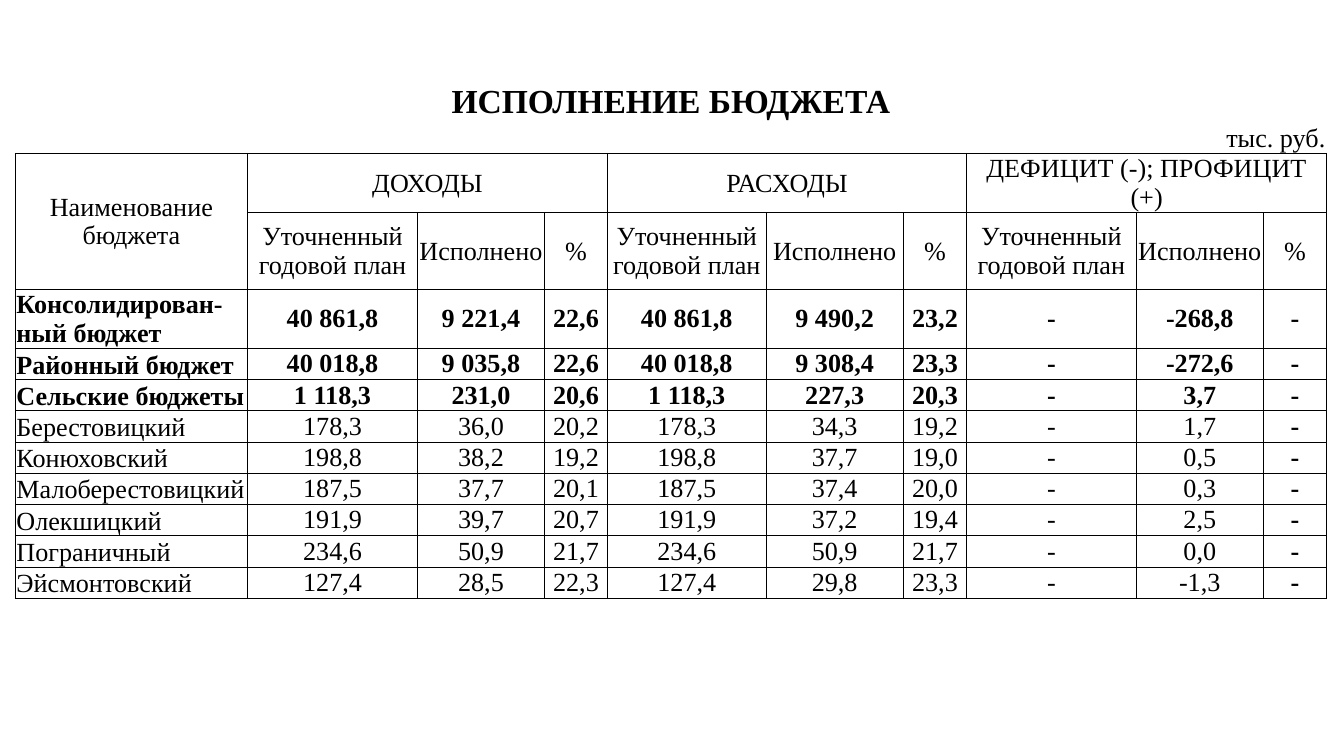
import pptx
import pptx.util
import pptx.dml.color
import pptx.enum.text
import lxml.etree
from pptx.oxml.ns import qn

Cm = pptx.util.Cm
ALIGN = pptx.enum.text.PP_ALIGN
ANCHOR = pptx.enum.text.MSO_ANCHOR
BLACK = pptx.dml.color.RGBColor(0, 0, 0)
FONT = "Times New Roman"
SIZE = 14
NO_STYLE = "{2D5ABB26-0587-4C30-8999-92F81FD0307C}"

COLS = [4.39, 2.57, 0.64, 1.66, 0.74, 1.19, 3, 0.53, 2.06, 0.23, 0.97,
        3.2, 1.32, 1.09, 1.19]
ROWS = [0.71, 0.58, 1.12, 1.45, 1.12] + [0.59] * 8

# Column spans as (first column, last column)
UNIT_SPANS = [(0, 0), (1, 1), (2, 3), (4, 5), (6, 7), (8, 9), (10, 10),
              (11, 12), (13, 14)]
GROUP_SPANS = [(1, 5), (6, 10), (11, 14)]
DATA_SPANS = [(0, 0), (1, 2), (3, 4), (5, 5), (6, 6), (7, 8), (9, 10),
              (11, 11), (12, 13), (14, 14)]

GROUPS = ["ДОХОДЫ", "РАСХОДЫ", "ДЕФИЦИТ (-); ПРОФИЦИТ (+)"]
MEASURES = ["Уточненный годовой план", "Исполнено", "%"]
BUDGETS = [
    ["Консолидирован-ный бюджет", "40 861,8", "9 221,4", "22,6", "40 861,8", "9 490,2", "23,2", "-", "-268,8", "-"],
    ["Районный бюджет", "40 018,8", "9 035,8", "22,6", "40 018,8", "9 308,4", "23,3", "-", "-272,6", "-"],
    ["Сельские бюджеты", "1 118,3", "231,0", "20,6", "1 118,3", "227,3", "20,3", "-", "3,7", "-"],
    ["Берестовицкий", "178,3", "36,0", "20,2", "178,3", "34,3", "19,2", "-", "1,7", "-"],
    ["Конюховский", "198,8", "38,2", "19,2", "198,8", "37,7", "19,0", "-", "0,5", "-"],
    ["Малоберестовицкий", "187,5", "37,7", "20,1", "187,5", "37,4", "20,0", "-", "0,3", "-"],
    ["Олекшицкий", "191,9", "39,7", "20,7", "191,9", "37,2", "19,4", "-", "2,5", "-"],
    ["Пограничный", "234,6", "50,9", "21,7", "234,6", "50,9", "21,7", "-", "0,0", "-"],
    ["Эйсмонтовский", "127,4", "28,5", "22,3", "127,4", "29,8", "23,3", "-", "-1,3", "-"],
]
BOLD_BUDGETS = 3


def write(cell, text, size=SIZE, bold=False, align=ALIGN.CENTER,
          anchor=ANCHOR.MIDDLE, bottom=0):
    cell.vertical_anchor = anchor
    cell.margin_bottom = Cm(bottom)
    tf = cell.text_frame
    for i, line in enumerate(text.split("\n")):
        p = tf.add_paragraph() if i else tf.paragraphs[0]
        p.alignment = align
        r = p.add_run()
        r.text = line
        r.font.name = FONT
        r.font.size = pptx.util.Pt(size)
        r.font.bold = bold
        r.font.color.rgb = BLACK


def add_borders(cell, sides):
    tc_pr = cell._tc.get_or_add_tcPr()
    for i, side in enumerate(sides):
        ln = lxml.etree.Element(qn("a:ln" + side), w=str(pptx.util.Pt(0.5)))
        fill = lxml.etree.SubElement(ln, qn("a:solidFill"))
        lxml.etree.SubElement(fill, qn("a:srgbClr"), val=str(BLACK))
        tc_pr.insert(i, ln)


prs = pptx.Presentation()
prs.slide_width, prs.slide_height = Cm(25.4), Cm(14.29)
s = prs.slides.add_slide(prs.slide_layouts[6])

# Table grid
frame = s.shapes.add_table(len(ROWS), len(COLS), Cm(0.29), Cm(1.55),
                           Cm(sum(COLS)), Cm(sum(ROWS)))
table = frame.table
table.first_row = table.horz_banding = False
table._tbl.tblPr.find(qn("a:tableStyleId")).text = NO_STYLE
for column, width in zip(table.columns, COLS):
    column.width = Cm(width)
for row, height in zip(table.rows, ROWS):
    row.height = Cm(height)

# Margins and borders: none on the title, a bottom line on the unit row
for i, row in enumerate(table.rows):
    for cell in row.cells:
        cell.margin_left = cell.margin_right = cell.margin_top = Cm(0.02)
        cell.margin_bottom = 0
        cell.fill.background()
        add_borders(cell, ["", "B", "LRTB"][min(i, 2)])

# Merged cells
merges = [(0, 0, 0, 14), (2, 0, 3, 0)]
merges += [(1, a, 1, b) for a, b in UNIT_SPANS]
merges += [(2, a, 2, b) for a, b in GROUP_SPANS]
merges += [(i, a, i, b) for i in range(3, len(ROWS)) for a, b in DATA_SPANS]
for top, left, bottom, right in merges:
    if (top, left) != (bottom, right):
        table.cell(top, left).merge(table.cell(bottom, right))

# Title and unit
write(table.cell(0, 0), "ИСПОЛНЕНИЕ БЮДЖЕТА", size=18, bold=True)
write(table.cell(1, 13), "тыс. руб.", align=ALIGN.RIGHT, anchor=ANCHOR.BOTTOM)

# Empty cells of the unit row keep the body text size
for column in range(13):
    p = table.cell(1, column).text_frame.paragraphs[0]
    lxml.etree.SubElement(p._p, qn("a:endParaRPr"), sz=str(SIZE * 100))

# Header
write(table.cell(2, 0), "Наименование\nбюджета")
for (column, _), group in zip(GROUP_SPANS, GROUPS):
    write(table.cell(2, column), group)
for (column, _), measure in zip(DATA_SPANS[1:], MEASURES * len(GROUPS)):
    write(table.cell(3, column), measure)

# Budgets: the name, then plan, actual and percent for each group
for i, (name, *values) in enumerate(BUDGETS):
    bold = i < BOLD_BUDGETS
    write(table.cell(4 + i, 0), name, bold=bold, align=ALIGN.LEFT,
          anchor=ANCHOR.BOTTOM)
    for (column, _), value in zip(DATA_SPANS[1:], values):
        write(table.cell(4 + i, column), value, bottom=0.02,
              bold=bold or column == 14)

prs.save("out.pptx")
